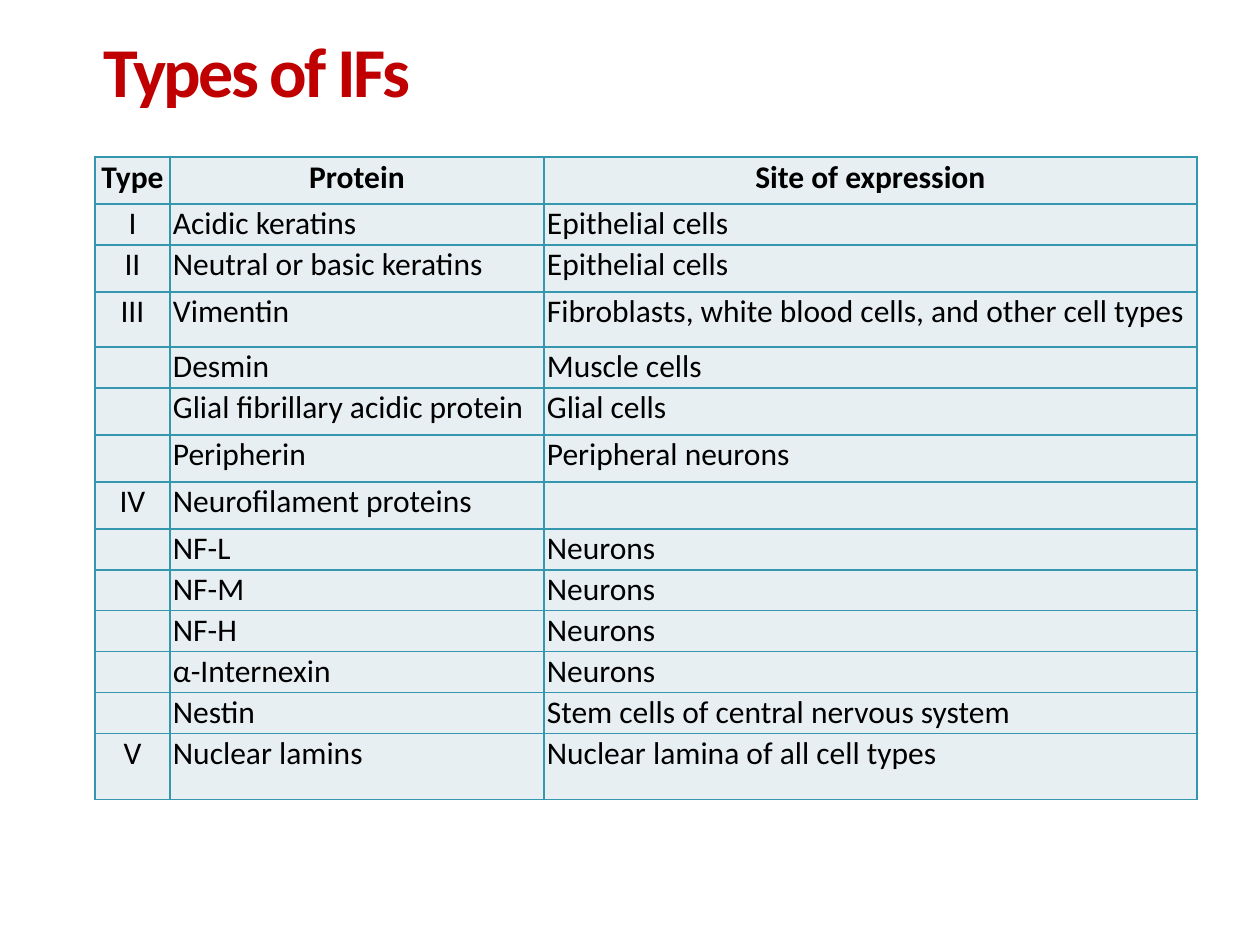
from lxml.etree import SubElement
from pptx import Presentation
from pptx.dml.color import RGBColor
from pptx.enum.text import MSO_ANCHOR, MSO_AUTO_SIZE, PP_ALIGN
from pptx.oxml.ns import qn
from pptx.util import Pt

PIXEL = 914400 / 126
COLORS = {"title": "C00000", "text": "000000", "cell": "E8EFF2", "border": "3497AE"}
TITLE_FONT = {"name": "Calibri", "size": Pt(40), "bold": True}
CELL_FONT = {"name": "Calibri", "size": Pt(18)}
TITLE_FRAME = {"auto_size": MSO_AUTO_SIZE.NONE, "vertical_anchor": MSO_ANCHOR.TOP, "word_wrap": True}
CELL_MARGINS = {"margin_left": 3, "margin_right": 3, "margin_top": 1, "margin_bottom": 1}
COLUMN_WIDTHS = [75, 374, 653]
ROW_HEIGHTS = [47, 41, 47, 55, 41, 47, 47, 47, 41, 41, 41, 41, 41, 66]
FILAMENTS = [
    ("Type", "Protein", "Site of expression"),
    ("I", "Acidic keratins", "Epithelial cells"),
    ("II", "Neutral or basic keratins", "Epithelial cells"),
    ("III", "Vimentin", "Fibroblasts, white blood cells, and other cell types"),
    ("", "Desmin", "Muscle cells"),
    ("", "Glial fibrillary acidic protein", "Glial cells"),
    ("", "Peripherin", "Peripheral neurons"),
    ("IV", "Neurofilament proteins", ""),
    ("", "NF-L", "Neurons"),
    ("", "NF-M", "Neurons"),
    ("", "NF-H", "Neurons"),
    ("", "α-Internexin", "Neurons"),
    ("", "Nestin", "Stem cells of central nervous system"),
    ("V", "Nuclear lamins", "Nuclear lamina of all cell types"),
]


def px(length):
    """Turn pixels into EMU."""
    return round(length * PIXEL)


def apply(target, values):
    """Set every named attribute on the target."""
    for name, value in values.items():
        setattr(target, name, value)


def write(paragraph, text, font, color, align):
    """Add one formatted span to a paragraph."""
    paragraph.alignment = align
    span = paragraph.add_run()
    span.text = text
    apply(span.font, font)
    span.font.color.rgb = RGBColor.from_string(COLORS[color])
    return span


def outline(cell):
    """Draw a thin line on all four sides of a cell."""
    properties = cell._tc.get_or_add_tcPr()
    for index, side in enumerate(("a:lnL", "a:lnR", "a:lnT", "a:lnB")):
        line = properties.makeelement(qn(side), {"w": str(Pt(1))})
        fill = SubElement(line, qn("a:solidFill"))
        SubElement(fill, qn("a:srgbClr"), val=COLORS["border"])
        properties.insert(index, line)


def add_title(page, box):
    """Place the slide title in the box."""
    title = page.shapes.title
    title.left, title.top, title.width, title.height = map(px, box)
    apply(title.text_frame, TITLE_FRAME)
    paragraph = title.text_frame.paragraphs[0]
    paragraph.line_spacing = 0.9
    span = write(paragraph, "Types of IFs", TITLE_FONT, "title", PP_ALIGN.LEFT)
    span.font._element.set("spc", "-150")


def fill_cell(cell, text, is_header, is_centred):
    """Format one table cell and write its text."""
    apply(cell, {name: px(margin) for name, margin in CELL_MARGINS.items()})
    cell.fill.solid()
    cell.fill.fore_color.rgb = RGBColor.from_string(COLORS["cell"])
    outline(cell)
    if text:
        align = PP_ALIGN.CENTER if is_centred else PP_ALIGN.LEFT
        write(cell.text_frame.paragraphs[0], text, CELL_FONT | {"bold": is_header}, "text", align)


def add_filament_table(page, left, top):
    """Place the table of filament types with its corner at left and top."""
    box = (left, top, sum(COLUMN_WIDTHS), sum(ROW_HEIGHTS))
    table = page.shapes.add_table(len(FILAMENTS), len(COLUMN_WIDTHS), *map(px, box)).table
    apply(table, {"first_row": False, "horz_banding": False})
    for column, width in zip(table.columns, COLUMN_WIDTHS):
        column.width = px(width)
    for row_index, (row, height, texts) in enumerate(zip(table.rows, ROW_HEIGHTS, FILAMENTS)):
        row.height = px(height)
        for column_index, (cell, text) in enumerate(zip(row.cells, texts)):
            is_header = row_index == 0
            fill_cell(cell, text, is_header, is_header or column_index == 0)


def main():
    """Build the deck and save it."""
    deck = Presentation()
    deck.slide_width, deck.slide_height = px(1260), px(945)
    page = deck.slides.add_slide(deck.slide_layouts[5])
    add_title(page, (91, 31, 1002, 77))
    add_filament_table(page, 95, 157)
    deck.save("out.pptx")


if __name__ == "__main__":
    main()
